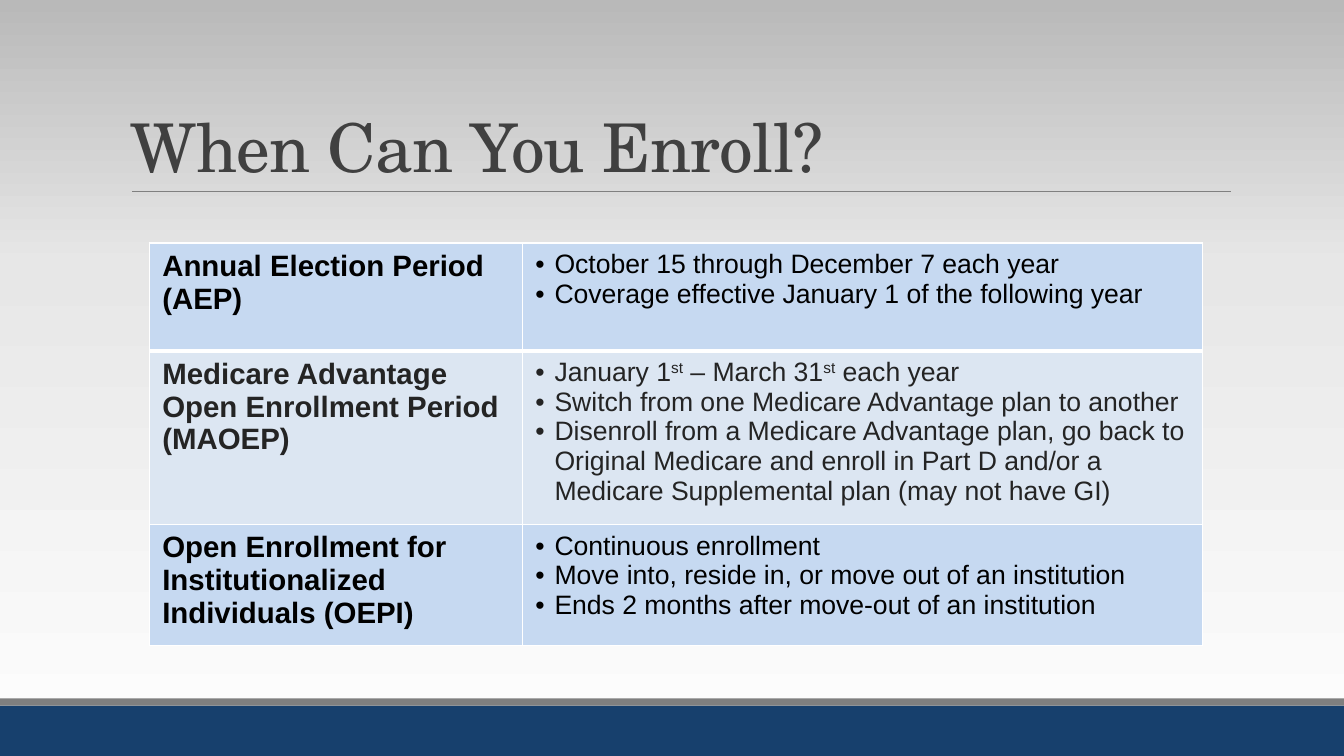
from copy import deepcopy

from pptx import Presentation
from pptx import util as u
from pptx.dml.color import RGBColor
from pptx.enum import shapes, text
from pptx.oxml import parse_xml
from pptx.oxml.ns import nsdecls, qn

COLORS = {
    "navy": "17406D", "gray": "7F7F7F", "rule": "808080", "title": "404040",
    "blue": "C6D9F1", "pale": "DCE6F2", "black": "000000", "ink": "242424",
    "white": "FFFFFF", "low": "FEFEFE", "mid": "E7E7E7", "high": "B9B9B9",
}

# Period, fill, text colour, row height, bullets (^ marks superscript)
ROWS = [
    ("Annual Election Period (AEP)", "blue", "black", 1.07, [
        "October 15 through December 7 each year",
        "Coverage effective January 1 of the following year"]),
    ("Medicare Advantage Open Enrollment Period (MAOEP)", "pale", "ink", 1.69, [
        "January 1^st^ – March 31^st^ each year",
        "Switch from one Medicare Advantage plan to another",
        "Disenroll from a Medicare Advantage plan, go back to Original Medicare "
        "and enroll in Part D and/or a Medicare Supplemental plan (may not have GI)"]),
    ("Open Enrollment for Institutionalized Individuals (OEPI)", "blue", "black", 1.2, [
        "Continuous enrollment",
        "Move into, reside in, or move out of an institution",
        "Ends 2 months after move-out of an institution"]),
]


def rgb(name):
    return RGBColor.from_string(COLORS[name])


class Deck:
    head = "TeX Gyre Schola"
    body = "Arial"

    def __init__(self, wide, high):
        self.prs = Presentation()
        self.prs.slide_width = u.Inches(wide)
        self.prs.slide_height = u.Inches(high)
        self.slide = self.prs.slides.add_slide(self.prs.slide_layouts[6])

    def back(self, stops):
        fill = self.slide.background.fill
        fill.gradient()
        fill.gradient_angle = 90
        group = self.slide.element.find(".//" + qn("a:gsLst"))
        group.append(deepcopy(group[-1]))
        for stop, (place, color) in zip(fill.gradient_stops, stops):
            stop.position = place
            stop.color.rgb = rgb(color)

    def bar(self, top, high, color):
        box = self.slide.shapes.add_shape(
            shapes.MSO_SHAPE.RECTANGLE, 0, u.Inches(top),
            self.prs.slide_width, u.Inches(high))
        box.shadow.inherit = False
        box.fill.solid()
        box.fill.fore_color.rgb = rgb(color)
        box.line.fill.background()

    def rule(self, left, right, top, color):
        line = self.slide.shapes.add_connector(
            shapes.MSO_CONNECTOR.STRAIGHT, u.Inches(left), u.Inches(top),
            u.Inches(right), u.Inches(top))
        line.line.color.rgb = rgb(color)
        line.line.width = u.Pt(0.5)
        line.element.spPr.append(parse_xml(f"<a:effectLst {nsdecls('a')}/>"))

    def font(self, run, face, size, color, bold=False):
        run.font.name = face
        run.font.size = u.Pt(size)
        run.font.bold = bold
        run.font.color.rgb = rgb(color)

    def title(self, words, left, top, wide, high):
        box = self.slide.shapes.add_textbox(*map(u.Inches, (left, top, wide, high)))
        frame = box.text_frame
        frame.word_wrap = True
        frame.vertical_anchor = text.MSO_ANCHOR.BOTTOM
        frame.text = words
        para = frame.paragraphs[0]
        para.line_spacing = 0.85
        self.font(para.runs[0], self.head, 48, "title")
        para.runs[0].font._element.set("spc", "-50")

    def cell(self, cell, fill, edges):
        cell.margin_left = cell.margin_right = u.Inches(0.13)
        cell.margin_top = cell.margin_bottom = u.Inches(0.07)
        cell.fill.solid()
        cell.fill.fore_color.rgb = rgb(fill)
        props = cell._tc.get_or_add_tcPr()
        for spot, (side, width) in enumerate(edges.items()):
            props.insert(spot, parse_xml(
                f'<a:ln{side} {nsdecls("a")} w="{u.Pt(width)}"><a:solidFill>'
                f'<a:srgbClr val="{COLORS["white"]}"/></a:solidFill></a:ln{side}>'))

    def bullets(self, frame, items, color):
        for spot, item in enumerate(items):
            para = frame.add_paragraph() if spot else frame.paragraphs[0]
            props = para._p.get_or_add_pPr()
            props.set("marL", str(u.Inches(0.19)))
            props.set("indent", str(-u.Inches(0.19)))
            props.append(parse_xml(f'<a:buFont {nsdecls("a")} typeface="{self.body}"/>'))
            props.append(parse_xml(f'<a:buChar {nsdecls("a")} char="•"/>'))
            for part, words in enumerate(item.split("^")):
                run = para.add_run()
                run.text = words
                self.font(run, self.body, 19, color)
                if part % 2:
                    run.font._element.set("baseline", "30000")

    def table(self, left, top, cols, rows):
        high = sum(row[3] for row in rows)
        grid = self.slide.shapes.add_table(
            len(rows), len(cols), u.Inches(left), u.Inches(top),
            u.Inches(sum(cols)), u.Inches(high)).table
        grid.first_row = grid.horz_banding = False
        for col, wide in zip(grid.columns, cols):
            col.width = u.Inches(wide)
        for spot, (name, fill, color, tall, items) in enumerate(rows):
            grid.rows[spot].height = u.Inches(tall)
            # Thick edge below the first row
            edges = {"L": 1, "R": 1, "T": 3 if spot == 1 else 1,
                     "B": 3 if spot == 0 else 1}
            term, facts = grid.cell(spot, 0), grid.cell(spot, 1)
            for cell in (term, facts):
                self.cell(cell, fill, edges)
            term.text_frame.text = name
            self.font(term.text_frame.paragraphs[0].runs[0], self.body, 21, color, True)
            self.bullets(facts.text_frame, items, color)


def main():
    deck = Deck(13.33, 7.5)
    # Background and footer
    deck.back([(0, "low"), (0.65, "mid"), (1, "high")])
    deck.bar(7, 0.5, "navy")
    deck.bar(6.93, 0.07, "gray")
    # Title
    deck.rule(1.31, 12.21, 1.9, "rule")
    deck.title("When Can You Enroll?", 1.2, 0.31, 11, 1.59)
    # Enrollment periods
    deck.table(1.48, 2.41, [3.7, 6.75], ROWS)
    deck.prs.save("out.pptx")


if __name__ == "__main__":
    main()
